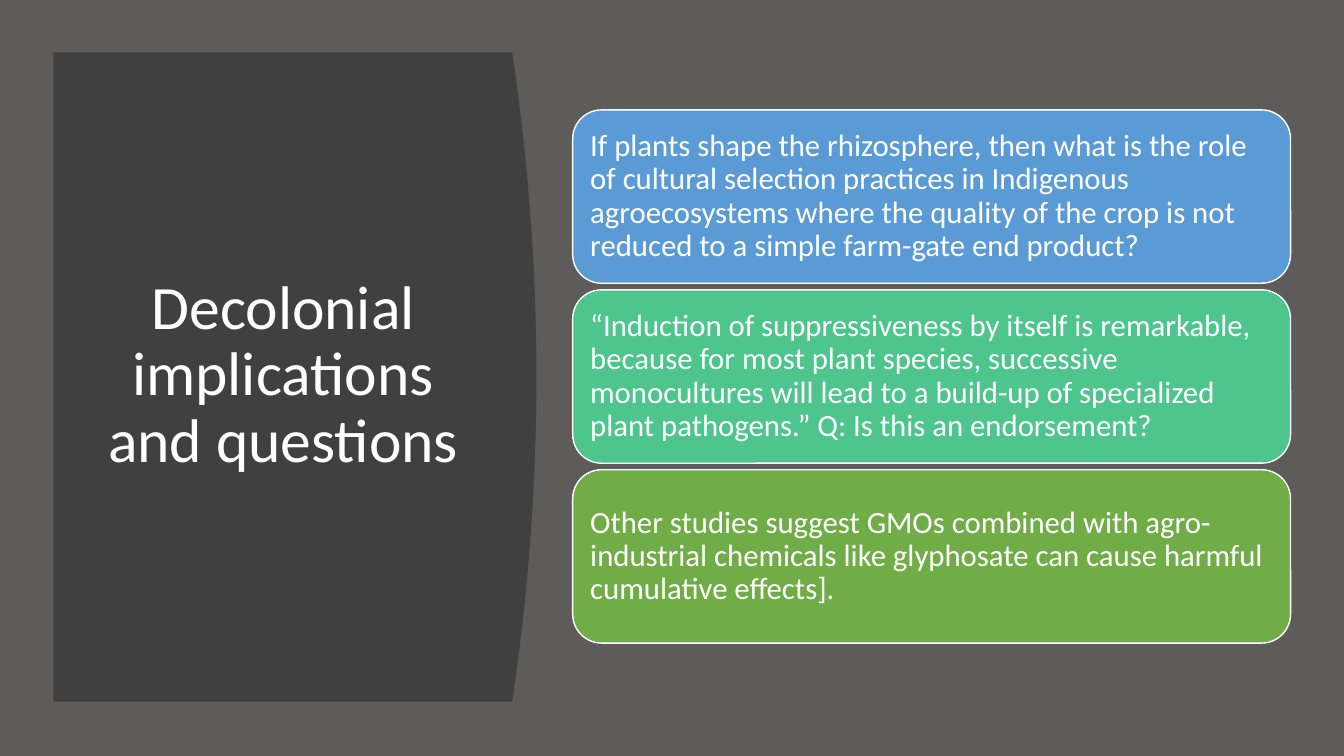
from dataclasses import dataclass

from pptx import Presentation
from pptx.dml.color import RGBColor
from pptx.enum.shapes import MSO_SHAPE as Shape
from pptx.enum.text import MSO_ANCHOR as Anchor, PP_ALIGN as Align
from pptx.shapes.autoshape import Shape as Box
from pptx.slide import Slide
from pptx.util import Inches, Pt

WHITE = "FFFFFF"
PANEL_LEFT, PANEL_TOP, PANEL_BOTTOM = 0.53, 0.52, 6.96
PANEL_EDGE, PANEL_BULGE = 5.08, 0.24
CURVE_STEPS = 40
CARD_LEFT, CARD_TOP, CARD_WIDTH, CARD_HEIGHT = 5.68, 1.09, 7.12, 1.72
CARD_PITCH = 1.785


@dataclass
class Card:
    fill: str
    text: str


CARDS = [
    Card("5B9BD5", "If plants shape the rhizosphere, then what is the role of cultural "
         "selection practices in Indigenous agroecosystems where the quality of the crop "
         "is not reduced to a simple farm-gate end product?"),
    Card("4DC58D", "“Induction of suppressiveness by itself is remarkable, because for most "
         "plant species, successive monocultures will lead to a build-up of specialized "
         "plant pathogens.” Q: Is this an endorsement?"),
    Card("70AD47", "Other studies suggest GMOs combined with agro-industrial chemicals like "
         "glyphosate can cause harmful cumulative effects]."),
]


def color(value: str) -> RGBColor:
    return RGBColor.from_string(value)


def paint(box: Box, fill: str, line: str | None = None) -> None:
    box.shadow.inherit = False
    box.fill.solid()
    box.fill.fore_color.rgb = color(fill)
    if line:
        box.line.color.rgb = color(line)
        box.line.width = Pt(1)
    else:
        box.line.fill.background()


def write(box: Box, text: str, *, size: float, align: Align = Align.LEFT,
          inset: float = 0.09) -> None:
    frame = box.text_frame
    frame.word_wrap = True
    frame.vertical_anchor = Anchor.MIDDLE
    frame.margin_left = frame.margin_right = Inches(inset)
    frame.margin_top = frame.margin_bottom = Inches(inset)
    para = frame.paragraphs[0]
    para.text = text
    para.alignment = align
    para.line_spacing = 0.9
    for span in para.runs:
        span.font.name = "Calibri"
        span.font.size = Pt(size)
        span.font.color.rgb = color(WHITE)


def draw_panel(page: Slide) -> None:
    """Draw the dark panel whose right side bulges as a parabola."""
    middle = (PANEL_TOP + PANEL_BOTTOM) / 2
    half = (PANEL_BOTTOM - PANEL_TOP) / 2
    curve = []
    for step in range(CURVE_STEPS + 1):
        offset = 2 * step / CURVE_STEPS - 1
        curve.append((Inches(PANEL_EDGE + PANEL_BULGE * (1 - offset ** 2)),
                      Inches(middle + half * offset)))
    builder = page.shapes.build_freeform(Inches(PANEL_LEFT), Inches(PANEL_TOP))
    builder.add_line_segments(curve + [(Inches(PANEL_LEFT), Inches(PANEL_BOTTOM))])
    paint(builder.convert_to_shape(), "404040")


def draw_title(page: Slide) -> None:
    box = page.shapes.add_textbox(Inches(0.94), Inches(1.11), Inches(3.74), Inches(5.24))
    write(box, "Decolonial implications\vand questions", size=44, align=Align.CENTER)


def draw_card(page: Slide, card: Card, top: float) -> None:
    box = page.shapes.add_shape(Shape.ROUNDED_RECTANGLE, Inches(CARD_LEFT), Inches(top),
                                Inches(CARD_WIDTH), Inches(CARD_HEIGHT))
    paint(box, card.fill, WHITE)
    write(box, card.text, size=22)


def main() -> None:
    deck = Presentation()
    deck.slide_width, deck.slide_height = Inches(13.33), Inches(7.5)
    page = deck.slides.add_slide(deck.slide_layouts[6])
    page.background.fill.solid()
    page.background.fill.fore_color.rgb = color("5E5C5A")
    draw_panel(page)
    draw_title(page)
    for index, card in enumerate(CARDS):
        draw_card(page, card, CARD_TOP + index * CARD_PITCH)
    deck.save("out.pptx")


if __name__ == "__main__":
    main()
